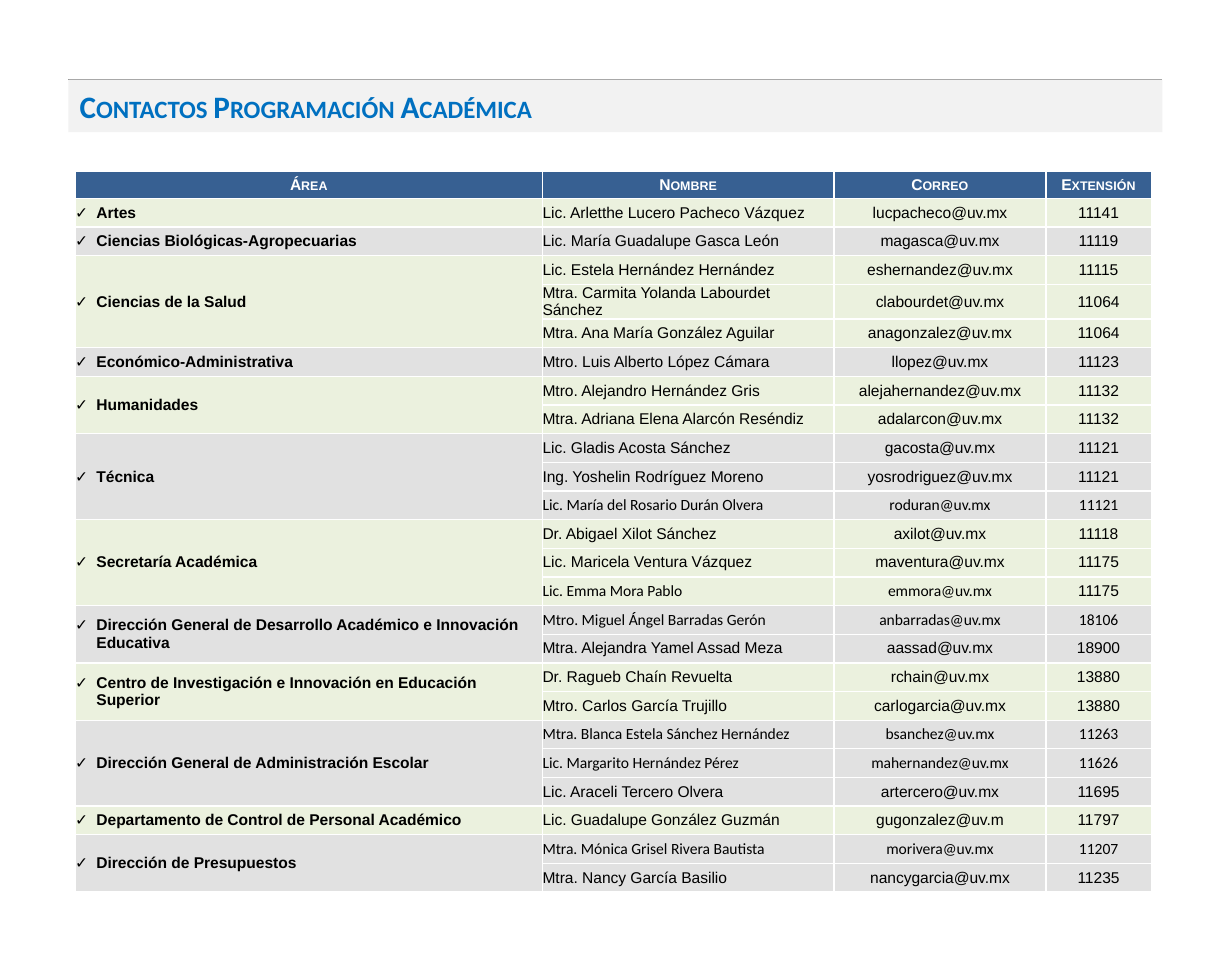
from pptx import Presentation
from pptx.dml.color import RGBColor
from pptx.enum.shapes import MSO_CONNECTOR
from pptx.enum.text import MSO_ANCHOR, MSO_AUTO_SIZE, PP_ALIGN
from pptx.oxml import parse_xml
from pptx.oxml.ns import nsdecls
from pptx.util import Inches, Pt
from lxml.etree import SubElement
from pptx.oxml.ns import qn

TITLE = "Contactos Programación Académica"
HEADERS = ["Área", "Nombre", "Correo", "Extensión"]
# Each area lists its contacts: name, mail, extension
AREAS = [
    ("Artes", [("Lic. Arletthe Lucero Pacheco Vázquez", "lucpacheco@uv.mx", "11141")]),
    ("Ciencias Biológicas-Agropecuarias", [
        ("Lic. María Guadalupe Gasca León", "magasca@uv.mx", "11119")]),
    ("Ciencias de la Salud", [
        ("Lic. Estela Hernández Hernández", "eshernandez@uv.mx", "11115"),
        ("Mtra. Carmita Yolanda Labourdet Sánchez", "clabourdet@uv.mx", "11064"),
        ("Mtra. Ana María González Aguilar", "anagonzalez@uv.mx", "11064")]),
    ("Económico-Administrativa", [
        ("Mtro. Luis Alberto López Cámara", "llopez@uv.mx", "11123")]),
    ("Humanidades", [
        ("Mtro. Alejandro Hernández Gris", "alejahernandez@uv.mx", "11132"),
        ("Mtra. Adriana Elena Alarcón Reséndiz", "adalarcon@uv.mx", "11132")]),
    ("Técnica", [
        ("Lic. Gladis Acosta Sánchez", "gacosta@uv.mx", "11121"),
        ("Ing. Yoshelin Rodríguez Moreno", "yosrodriguez@uv.mx", "11121"),
        ("Lic. María del Rosario Durán Olvera", "roduran@uv.mx", "11121")]),
    ("Secretaría Académica", [
        ("Dr. Abigael Xilot Sánchez", "axilot@uv.mx", "11118"),
        ("Lic. Maricela Ventura Vázquez", "maventura@uv.mx", "11175"),
        ("Lic. Emma Mora Pablo", "emmora@uv.mx", "11175")]),
    ("Dirección General de Desarrollo Académico e Innovación Educativa", [
        ("Mtro. Miguel Ángel Barradas Gerón", "anbarradas@uv.mx", "18106"),
        ("Mtra. Alejandra Yamel Assad Meza", "aassad@uv.mx", "18900")]),
    ("Centro de Investigación e Innovación en Educación Superior", [
        ("Dr. Ragueb Chaín Revuelta", "rchain@uv.mx", "13880"),
        ("Mtro. Carlos García Trujillo", "carlogarcia@uv.mx", "13880")]),
    ("Dirección General de Administración Escolar", [
        ("Mtra. Blanca Estela Sánchez Hernández", "bsanchez@uv.mx", "11263"),
        ("Lic. Margarito Hernández Pérez", "mahernandez@uv.mx", "11626"),
        ("Lic. Araceli Tercero Olvera", "artercero@uv.mx", "11695")]),
    ("Departamento de Control de Personal Académico", [
        ("Lic. Guadalupe González Guzmán", "gugonzalez@uv.m", "11797")]),
    ("Dirección de Presupuestos", [
        ("Mtra. Mónica Grisel Rivera Bautista", "morivera@uv.mx", "11207"),
        ("Mtra. Nancy García Basilio", "nancygarcia@uv.mx", "11235")]),
]
# Mail -> how many of its row's cells are set in Calibri
CALIBRI_CELLS = {"roduran@uv.mx": 3, "emmora@uv.mx": 2, "anbarradas@uv.mx": 3,
                 "bsanchez@uv.mx": 3, "mahernandez@uv.mx": 3, "morivera@uv.mx": 3}
COLORS = {"title": "0070C0", "title_band": "F2F2F2", "rule": "808080",
          "header": "376092", "green": "EBF1DE", "grey": "E1E1E1",
          "white": "FFFFFF", "black": "000000"}
COLUMN_WIDTHS = [4.17, 2.6, 1.89, 0.94]
HEADER_HEIGHT, TABLE_HEIGHT = 0.24, 6.38
LEFT, TOP, WIDTH = 0.61, 0.71, 9.76


def rgb(name):
    return RGBColor.from_string(COLORS[name])


def write(frame, text, size=10, font="Arial", color="black", bold=False,
          align=PP_ALIGN.LEFT, small_caps=False, bullet=None):
    paragraph = frame.paragraphs[0]
    paragraph.alignment = align
    if bullet:
        properties = paragraph._p.get_or_add_pPr()
        properties.set("marL", str(Inches(0.19)))
        properties.set("indent", str(-Inches(0.19)))
        SubElement(properties, qn("a:buFont")).set("typeface", "Arial")
        SubElement(properties, qn("a:buChar")).set("char", bullet)
    run = paragraph.add_run()
    run.text = text
    run.font.size, run.font.name, run.font.bold = Pt(size), font, bold
    run.font.color.rgb = rgb(color)
    if small_caps:
        run._r.get_or_add_rPr().set("cap", "small")


def style_cell(cell, fill):
    """Set white borders, no margins, middle anchor and a plain fill."""
    for side in ("lnL", "lnR", "lnT", "lnB"):
        cell._tc.get_or_add_tcPr().append(parse_xml(
            f'<a:{side} {nsdecls("a")} w="{Pt(1)}"><a:solidFill>'
            f'<a:srgbClr val="{COLORS["white"]}"/></a:solidFill></a:{side}>'))
    cell.margin_left = cell.margin_right = cell.margin_top = cell.margin_bottom = 0
    cell.vertical_anchor = MSO_ANCHOR.MIDDLE
    cell.fill.solid()
    cell.fill.fore_color.rgb = rgb(fill)


def add_title(slide):
    title = slide.shapes.title
    title.left, title.top = Inches(LEFT), Inches(TOP)
    title.width, title.height = Inches(WIDTH), Inches(0.47)
    title.fill.solid()
    title.fill.fore_color.rgb = rgb("title_band")
    title.text_frame.auto_size = MSO_AUTO_SIZE.NONE
    title.text_frame.vertical_anchor = MSO_ANCHOR.MIDDLE
    write(title.text_frame, TITLE, size=20, font="Calibri", color="title",
          bold=True, small_caps=True)
    rule = slide.shapes.add_connector(MSO_CONNECTOR.STRAIGHT, Inches(LEFT), Inches(TOP),
                                      Inches(LEFT + WIDTH), Inches(TOP))
    rule.line.color.rgb = rgb("rule")
    rule.line.width = Pt(0.75)
    SubElement(rule.element.spPr, qn("a:effectLst"))
    title.element.addprevious(rule.element)  # the rule lies behind the title band


def add_contacts(slide):
    contact_count = sum(len(contacts) for _, contacts in AREAS)
    table = slide.shapes.add_table(
        contact_count + 1, len(HEADERS), Inches(0.67), Inches(1.53),
        Inches(sum(COLUMN_WIDTHS)), Inches(TABLE_HEIGHT)).table
    table.first_row = table.horz_banding = False
    for column, width in zip(table.columns, COLUMN_WIDTHS):
        column.width = Inches(width)
    for row in table.rows:
        row.height = Inches((TABLE_HEIGHT - HEADER_HEIGHT) / contact_count)
    table.rows[0].height = Inches(HEADER_HEIGHT)

    for column, header in enumerate(HEADERS):
        style_cell(table.cell(0, column), "header")
        write(table.cell(0, column).text_frame, header, color="white", bold=True,
              align=PP_ALIGN.CENTER, small_caps=True)

    first = 1
    for index, (area, contacts) in enumerate(AREAS):
        fill = "grey" if index % 2 else "green"
        last = first + len(contacts) - 1
        for row, contact in enumerate(contacts, first):
            style_cell(table.cell(row, 0), fill)
            calibri_cells = CALIBRI_CELLS.get(contact[1], 0)
            for column, detail in enumerate(contact, 1):
                style_cell(table.cell(row, column), fill)
                write(table.cell(row, column).text_frame, detail,
                      font="Calibri" if column <= calibri_cells else "Arial",
                      align=PP_ALIGN.LEFT if column == 1 else PP_ALIGN.CENTER)
        if last > first:
            table.cell(first, 0).merge(table.cell(last, 0))
        write(table.cell(first, 0).text_frame, area, bold=True, bullet="✓")
        first = last + 1


def main():
    presentation = Presentation()
    presentation.slide_width, presentation.slide_height = Inches(10.99), Inches(8.51)
    slide = presentation.slides.add_slide(presentation.slide_layouts[5])
    add_title(slide)
    add_contacts(slide)
    presentation.save("out.pptx")


if __name__ == "__main__":
    main()
